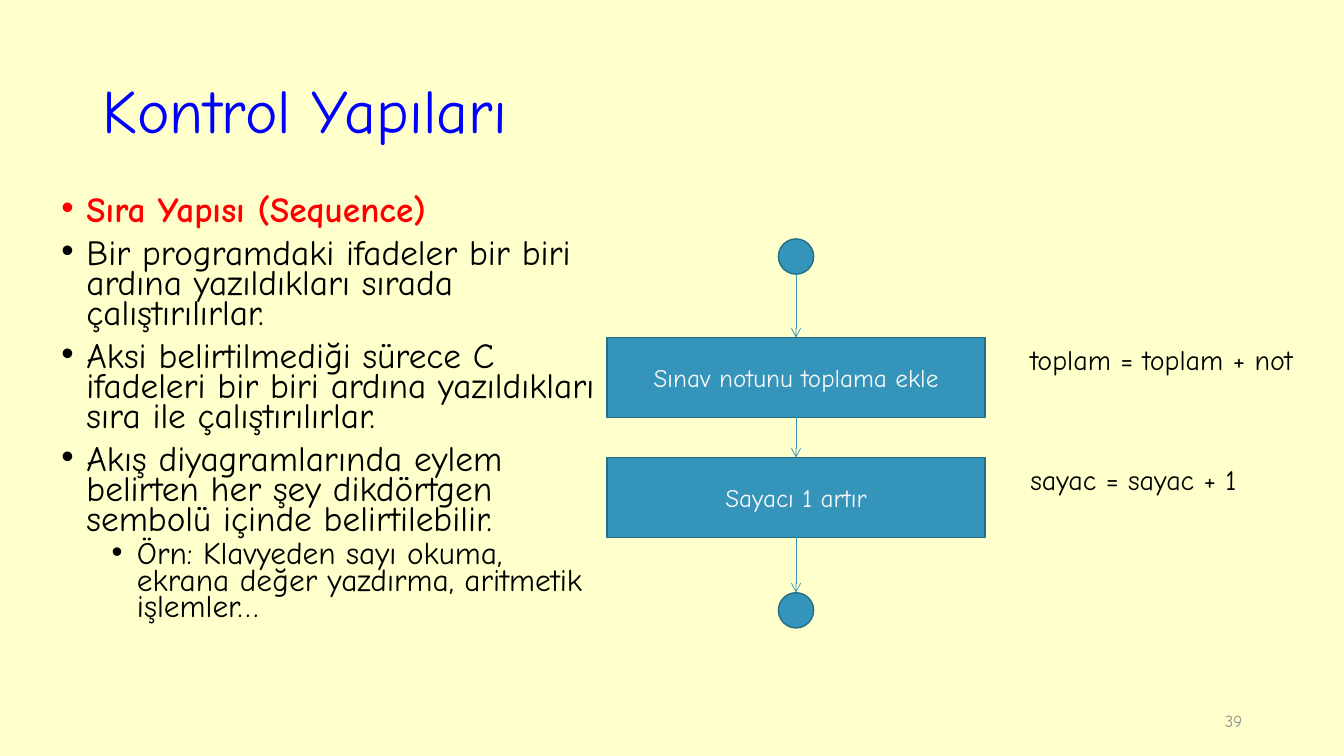
from lxml import etree
from pptx import Presentation
from pptx.dml.color import RGBColor
from pptx.enum import shapes, text
from pptx.oxml import ns
from pptx.util import Inches, Pt

FONT = "Comic Neue"
HUES = {"page": "FFFFCC", "title": "0000FF", "key": "FF0000", "ink": "000000",
        "fill": "3494BA", "edge": "266D8A", "light": "F8F8F8", "gray": "8C8C8C"}
WIDE, HIGH = 13.33, 7.5


def hue(name):
    return RGBColor.from_string(HUES[name])


def sub(node, tag, **attrs):
    return etree.SubElement(node, ns.qn(tag), attrs)


def write(para, words, size, color, bold=False):
    run = para.add_run()
    run.text = words
    run.font.name, run.font.size, run.font.bold = FONT, Pt(size), bold
    run.font.color.rgb = hue(color)


def label(slide, box, words, size, color, align=text.PP_ALIGN.LEFT,
          anchor=text.MSO_ANCHOR.TOP):
    frame = slide.shapes.add_textbox(*map(Inches, box)).text_frame
    frame.word_wrap = True
    frame.vertical_anchor = anchor
    frame.paragraphs[0].alignment = align
    write(frame.paragraphs[0], words, size, color)


def head(slide, box, words):
    title = slide.shapes.title
    title.left, title.top, title.width, title.height = map(Inches, box)
    frame = title.text_frame
    frame.vertical_anchor = text.MSO_ANCHOR.MIDDLE
    para = frame.paragraphs[0]
    para.alignment, para.line_spacing = text.PP_ALIGN.LEFT, 0.9
    write(para, words, 44, "title")


def bullets(slide, box, items):
    frame = slide.shapes.add_textbox(*map(Inches, box)).text_frame
    frame.word_wrap = True
    for i, (level, color, words) in enumerate(items):
        para = frame.add_paragraph() if i else frame.paragraphs[0]
        para.level = level
        para.line_spacing = 0.7
        para.space_before = Pt(5 if level else 10)
        props = para._p.get_or_add_pPr()
        props.set("marL", str(Inches(0.25 + 0.5 * level)))
        props.set("indent", str(Inches(-0.25)))
        sub(props, "a:buFont", typeface="Arial")
        sub(props, "a:buChar", char="•")
        write(para, words, 22.4 if level else 25.2, color, color == "key")


def block(slide, kind, box):
    shape = slide.shapes.add_shape(kind, *map(Inches, box))
    shape.shadow.inherit = False
    shape.fill.solid()
    shape.fill.fore_color.rgb = hue("fill")
    shape.line.color.rgb = hue("edge")
    shape.line.width = Pt(1)
    return shape


def arrow(slide, x, top, end, above=None, below=None):
    line = slide.shapes.add_connector(shapes.MSO_CONNECTOR.STRAIGHT,
                                      *map(Inches, (x, top, x, end)))
    if above:
        line.begin_connect(above, 2)
    if below:
        line.end_connect(below, 0)
    line.line.color.rgb = hue("fill")
    line.line.width = Pt(0.5)
    sub(line.line._get_or_add_ln(), "a:tailEnd", type="arrow")
    sub(line._element.spPr, "a:effectLst")


def flow(slide, box, steps):
    """Start dot, one box per step with its code beside it, end dot."""
    left, top, wide, high = box
    dot, tall, pitch, lead = 0.35, 0.79, 1.19, 0.98
    mid = left + wide / 2
    dots = [top, top + high - dot]
    for y in dots:
        block(slide, shapes.MSO_SHAPE.FLOWCHART_CONNECTOR,
              (mid - dot / 2, y, dot, dot))
    rects = []
    for i, (words, code) in enumerate(steps):
        y = top + lead + i * pitch
        rect = block(slide, shapes.MSO_SHAPE.RECTANGLE, (left, y, wide, tall))
        frame = rect.text_frame
        frame.word_wrap = True
        frame.vertical_anchor = text.MSO_ANCHOR.MIDDLE
        frame.paragraphs[0].alignment = text.PP_ALIGN.CENTER
        write(frame.paragraphs[0], words, 18, "light")
        label(slide, (left + wide + 0.35, y, 3.09, 0.44), code, 20, "ink")
        rects.append(rect)
    # Arrows join each part to the next
    for above, below in zip([None] + rects, rects + [None]):
        arrow(slide, mid, dots[0] + dot, dots[1], above, below)


def main():
    deck = Presentation()
    deck.slide_width, deck.slide_height = Inches(WIDE), Inches(HIGH)
    slide = deck.slides.add_slide(deck.slide_layouts[5])
    slide.background.fill.solid()
    slide.background.fill.fore_color.rgb = hue("page")

    head(slide, (0.92, 0.4, 11.5, 1.45), "Kontrol Yapıları")
    bullets(slide, (0.51, 1.92, 5.5, 4.76), [
        (0, "key", "Sıra Yapısı (Sequence)"),
        (0, "ink", "Bir programdaki ifadeler bir biri ardına yazıldıkları "
                   "sırada çalıştırılırlar."),
        (0, "ink", "Aksi belirtilmediği sürece C ifadeleri bir biri ardına "
                   "yazıldıkları sıra ile çalıştırılırlar."),
        (0, "ink", "Akış diyagramlarında eylem belirten her şey dikdörtgen "
                   "sembolü içinde belirtilebilir."),
        (1, "ink", "Örn: Klavyeden sayı okuma, ekrana değer yazdırma, "
                   "aritmetik işlemler…"),
    ])
    flow(slide, (6.02, 2.37, 3.75, 3.86), [
        ("Sınav notunu toplama ekle", "toplam = toplam + not"),
        ("Sayacı 1 artır", "sayac = sayac + 1"),
    ])
    # Page number
    label(slide, (9.42, 6.95, 3, 0.4), "39", 12, "gray",
          text.PP_ALIGN.RIGHT, text.MSO_ANCHOR.MIDDLE)
    deck.save("out.pptx")


if __name__ == "__main__":
    main()
